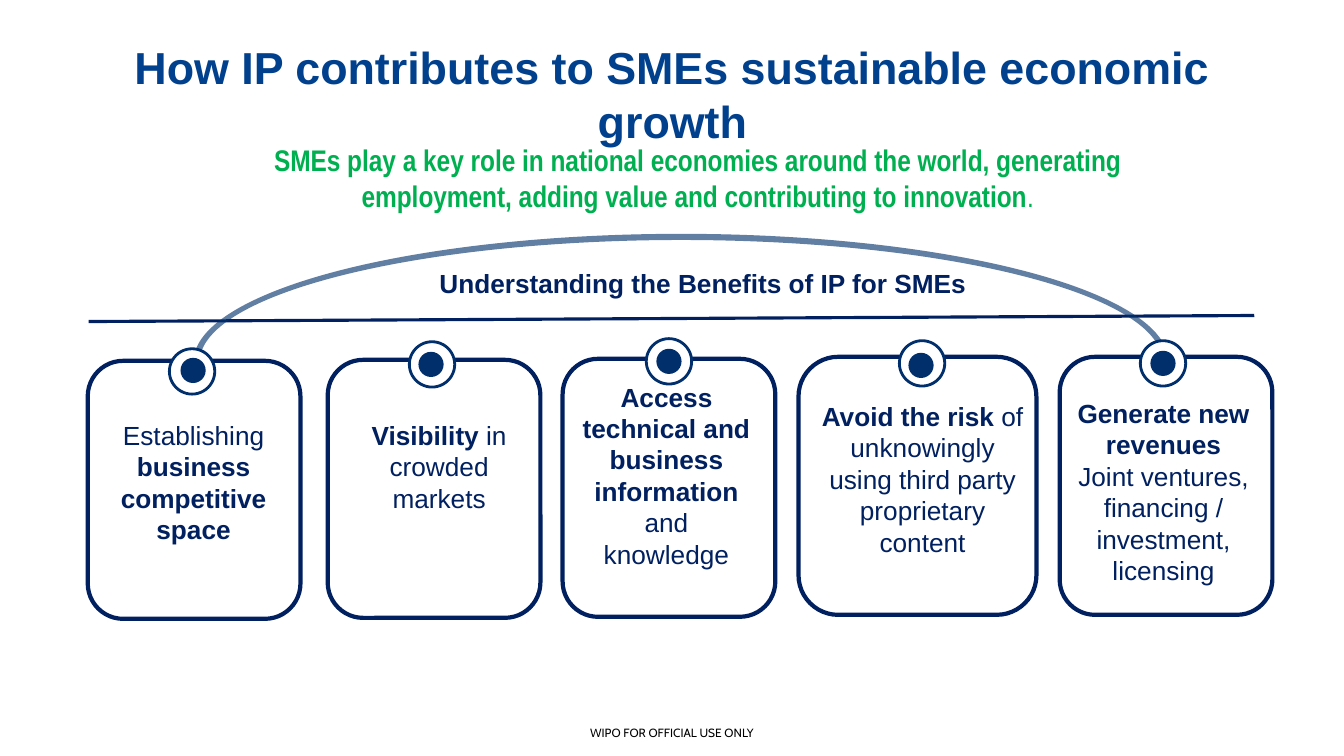
from lxml.etree import SubElement
from pptx import Presentation
from pptx.dml.color import RGBColor
from pptx.enum.shapes import MSO_CONNECTOR as Connector, MSO_SHAPE as Preset
from pptx.enum.text import MSO_ANCHOR as Anchor, PP_ALIGN as Align
from pptx.oxml.ns import qn
from pptx.util import Inches, Pt

COLORS = {
    "title": "00408C",
    "navy": "002060",
    "marker": "002F6C",
    "green": "00B050",
    "white": "FFFFFF",
    "black": "000000",
}

TITLE = "How IP contributes to SMEs sustainable economic growth"
ROLE = [[
    ("SMEs play a key role in national economies around the world, generating "
     "employment, adding value and contributing to innovation", True),
    (".", False),
]]
HEADING = [[("Understanding the Benefits of IP for SMEs", True)]]
FOOTER = [[("WIPO FOR OFFICIAL USE ONLY", False)]]

BENEFITS = [
    {"card": (0.87, 3.58, 2.11), "text": (0.98, 4.11, 1.88),
     "ring": (1.68, 3.46), "dot": (1.79, 3.55),
     "wording": [[("Establishing ", False), ("business competitive space", True)]]},
    {"card": (3.25, 3.57, 2.11), "text": (3.45, 4.11, 1.81),
     "ring": (4.06, 3.39), "dot": (4.15, 3.49),
     "wording": [[("Visibility", True), (" in crowded markets", False)]]},
    {"card": (5.58, 3.56, 2.11), "text": (5.66, 3.73, 1.9),
     "ring": (6.41, 3.36), "dot": (6.51, 3.46),
     "wording": [[("Access technical and business information", True),
                  (" and knowledge", False)]]},
    {"card": (7.92, 3.54, 2.36), "text": (8.01, 3.92, 2.28),
     "ring": (8.92, 3.38), "dot": (9.01, 3.5),
     "wording": [[("Avoid the risk", True),
                  (" of unknowingly using third party proprietary content", False)]]},
    {"card": (10.51, 3.54, 2.11), "text": (10.52, 3.89, 2.04),
     "ring": (11.31, 3.38), "dot": (11.41, 3.48),
     "wording": [[("Generate new revenues", True)],
                 [("Joint ventures, financing / investment, licensing", False)]]},
]
CARD_HEIGHT, TEXT_HEIGHT, RING_SIZE, DOT_SIZE = 2.56, 1.89, 0.45, 0.25


def rgb(name):
    return RGBColor.from_string(COLORS[name])


def style(font, face, size, color, bold):
    font.name, font.size, font.bold = face, Pt(size), bold
    font.color.rgb = rgb(color)


def add_text(slide, box, wording, size, color, face="Arial", align=Align.CENTER):
    frame = slide.shapes.add_textbox(*map(Inches, box)).text_frame
    frame.word_wrap = True
    for index, parts in enumerate(wording):
        paragraph = frame.add_paragraph() if index else frame.paragraphs[0]
        paragraph.alignment = align
        for words, bold in parts:
            run = paragraph.add_run()
            run.text = words
            style(run.font, face, size, color, bold)


def add_outline(slide, preset, box, fill=None, line=None, width=0):
    shape = slide.shapes.add_shape(preset, *map(Inches, box))
    shape.shadow.inherit = False
    if fill:
        shape.fill.solid()
        shape.fill.fore_color.rgb = rgb(fill)
    else:
        shape.fill.background()
    if line:
        shape.line.color.rgb = rgb(line)
        shape.line.width = Pt(width)
    else:
        shape.line.fill.background()
    return shape


def add_divider(slide):
    divider = slide.shapes.add_connector(
        Connector.STRAIGHT, *map(Inches, (0.88, 3.19, 12.44, 3.13)))
    divider.line.color.rgb = rgb("navy")
    divider.line.width = Pt(2.25)
    SubElement(divider._element.spPr, qn("a:effectLst"))


def add_arch(slide):
    arch = add_outline(slide, Preset.BLOCK_ARC, (1.92, 2.32, 9.67, 2.54), "marker")
    for index, value in enumerate((108.63, 0, 0.024)):
        arch.adjustments[index] = value
    tint = arch._element.spPr.find(qn("a:solidFill"))[0]
    SubElement(tint, qn("a:alpha")).set("val", "62000")


def main():
    deck = Presentation()
    deck.slide_width, deck.slide_height = Inches(13.33), Inches(7.5)
    slide = deck.slides.add_slide(deck.slide_layouts[5])

    title = slide.shapes.title
    title.left, title.top, title.width, title.height = map(Inches, (0.67, 0.3, 12, 1.25))
    title.text_frame.text = TITLE
    title.text_frame.vertical_anchor = Anchor.MIDDLE
    heading = title.text_frame.paragraphs[0]
    heading.alignment = Align.CENTER
    style(heading.runs[0].font, "Arial", 32, "title", True)

    add_text(slide, (0, 7.15, 13.33, 0.24), FOOTER, 8.5, "black", "Cabin")
    add_text(slide, (2.13, 1.36, 9.58, 0.96), ROLE, 21.3, "green", "Arial Narrow")
    add_text(slide, (4.26, 2.6, 6.22, 0.64), HEADING, 18.7, "navy", align=Align.LEFT)
    add_divider(slide)

    for benefit in BENEFITS:
        add_outline(slide, Preset.ROUNDED_RECTANGLE, (*benefit["card"], CARD_HEIGHT),
                    line="navy", width=3)
        add_text(slide, (*benefit["text"], TEXT_HEIGHT), benefit["wording"], 18.7, "navy")

    add_arch(slide)
    for benefit in BENEFITS:
        add_outline(slide, Preset.OVAL, (*benefit["ring"], RING_SIZE, RING_SIZE),
                    "white", "marker", 2)
        add_outline(slide, Preset.OVAL, (*benefit["dot"], DOT_SIZE, DOT_SIZE), "marker")

    deck.save("out.pptx")


if __name__ == "__main__":
    main()
